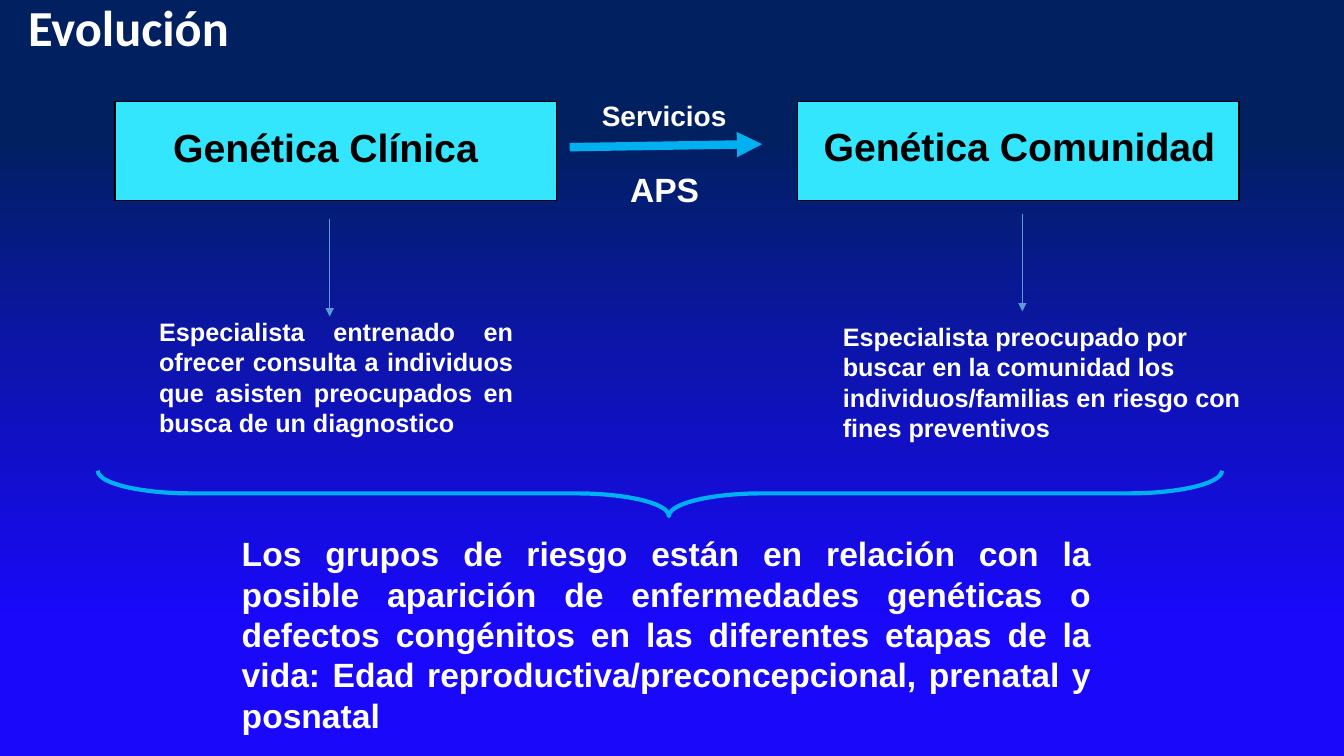
from copy import deepcopy

from pptx import Presentation
from pptx.dml.color import RGBColor
from pptx.enum.shapes import MSO_CONNECTOR as Connector, MSO_SHAPE as Preset
from pptx.enum.text import MSO_ANCHOR as Anchor, MSO_AUTO_SIZE as AutoSize, PP_ALIGN as Align
from pptx.oxml.ns import qn
from pptx.oxml.xmlchemy import OxmlElement
from pptx.util import Inches, Pt

WIDTH, HEIGHT = Inches(13.33), Inches(7.5)
WHITE, BLACK, CYAN, SKY, STEEL = "FFFFFF", "000000", "33E5FD", "00B0F0", "5B9BD5"
BACKGROUND_STOPS = [(0.18, "002060"), (0.48, "0D14AD"), (0.82, "1908FA")]

BOX_TOP, BOX_WIDTH, BOX_HEIGHT = 13.47, 32.86, 13.07
ARROW_LENGTH = 12.93

BRANCHES = [
    {
        "box_left": 8.55,
        "heading": ("Genética Clínica", (12.15, 15.6, 28.13, 7.6)),
        "arrow": (24.53, 28.93),
        "detail": ("Especialista entrenado en ofrecer consulta a individuos "
                   "que asisten preocupados en busca de un diagnostico",
                   (11.1, 41.2, 27.83, 17.47)),
        "alignment": Align.JUSTIFY,
    },
    {
        "box_left": 59.34,
        "heading": ("Genética Comunidad", (60.54, 15.47, 31.73, 7.6)),
        "arrow": (76.07, 28.27),
        "detail": ("Especialista preocupado por buscar en la comunidad los "
                   "individuos/familias en riesgo con fines preventivos",
                   (61.97, 41.87, 32.86, 17.47)),
        "alignment": Align.LEFT,
    },
]

CONCLUSION = ("Los grupos de riesgo están en relación con la posible aparición de "
              "enfermedades genéticas o defectos congénitos en las diferentes etapas "
              "de la vida: Edad reproductiva/preconcepcional, prenatal y posnatal")


def color(hex_value):
    return RGBColor.from_string(hex_value)


def place(area):
    """Turn percent shares of the slide into lengths."""
    return [round(share * side / 100) for share, side in zip(area, (WIDTH, HEIGHT) * 2)]


def apply(target, values):
    for name, value in values.items():
        setattr(target, name, value)


def set_line(line, hex_value, width):
    line.color.rgb = color(hex_value)
    line.width = Pt(width)


def write(shape, text, size, hex_value=WHITE, alignment=Align.LEFT, font="Arial"):
    frame = shape.text_frame
    apply(frame, {"word_wrap": True, "auto_size": AutoSize.SHAPE_TO_FIT_TEXT,
                  "vertical_anchor": Anchor.TOP})
    paragraph = frame.paragraphs[0]
    paragraph.alignment = alignment
    run = paragraph.add_run()
    run.text = text
    apply(run.font, {"name": font, "size": Pt(size), "bold": True})
    run.font.color.rgb = color(hex_value)


def add_text(slide, text, area, size, **style):
    write(slide.shapes.add_textbox(*place(area)), text, size, **style)


def add_title(slide, text, area):
    title = slide.shapes.title
    apply(title, dict(zip(("left", "top", "width", "height"), place(area))))
    write(title, text, 36, font="Calibri")


def add_box(slide, area):
    box = slide.shapes.add_shape(Preset.RECTANGLE, *place(area))
    box.shadow.inherit = False
    box.fill.solid()
    box.fill.fore_color.rgb = color(CYAN)
    set_line(box.line, BLACK, 1)


def add_arrow(slide, ends, hex_value, width):
    arrow = slide.shapes.add_connector(Connector.STRAIGHT, *place(ends))
    set_line(arrow.line, hex_value, width)
    head = OxmlElement("a:tailEnd")
    head.set("type", "triangle")
    arrow.line._get_or_add_ln().append(head)
    arrow.element.spPr.append(OxmlElement("a:effectLst"))


def add_brace(slide, area):
    brace = slide.shapes.add_shape(Preset.RIGHT_BRACE, *place(area))
    brace.rotation = 90
    brace.adjustments[0], brace.adjustments[1] = 2.053, 0.492
    brace.shadow.inherit = False
    brace.fill.background()
    set_line(brace.line, SKY, 3)


def paint_background(slide):
    fill = slide.background.fill
    fill.gradient()
    fill.gradient_angle = 270
    stop_list = next(slide.element.iter(qn("a:gsLst")))
    stop_list.append(deepcopy(stop_list[-1]))
    for stop, (position, hex_value) in zip(fill.gradient_stops, BACKGROUND_STOPS):
        stop.position = position
        stop.color.rgb = color(hex_value)


def add_branch(slide, branch):
    add_box(slide, (branch["box_left"], BOX_TOP, BOX_WIDTH, BOX_HEIGHT))
    add_text(slide, *branch["heading"], 28, hex_value=BLACK)
    x, top = branch["arrow"]
    add_arrow(slide, (x, top, x, top + ARROW_LENGTH), STEEL, 0.5)
    add_text(slide, *branch["detail"], 18, alignment=branch["alignment"])


def main():
    presentation = Presentation()
    apply(presentation, {"slide_width": WIDTH, "slide_height": HEIGHT})
    slide = presentation.slides.add_slide(presentation.slide_layouts[5])
    paint_background(slide)
    add_title(slide, "Evolución", (1.35, -1.2, 21.6, 9.47))
    for branch in BRANCHES:
        add_branch(slide, branch)
    add_arrow(slide, (42.39, 19.47, 56.71, 19.07), SKY, 6)
    add_text(slide, "Servicios", (44.04, 12.4, 11.4, 5.87), 20)
    add_text(slide, "APS", (46.14, 21.73, 9.23, 6.67), 24)
    add_brace(slide, (47.41, -9.07, 3.38, 148.67))
    add_text(slide, CONCLUSION, (17.25, 69.87, 64.67, 28.27), 24, alignment=Align.JUSTIFY)
    presentation.save("out.pptx")


if __name__ == "__main__":
    main()
